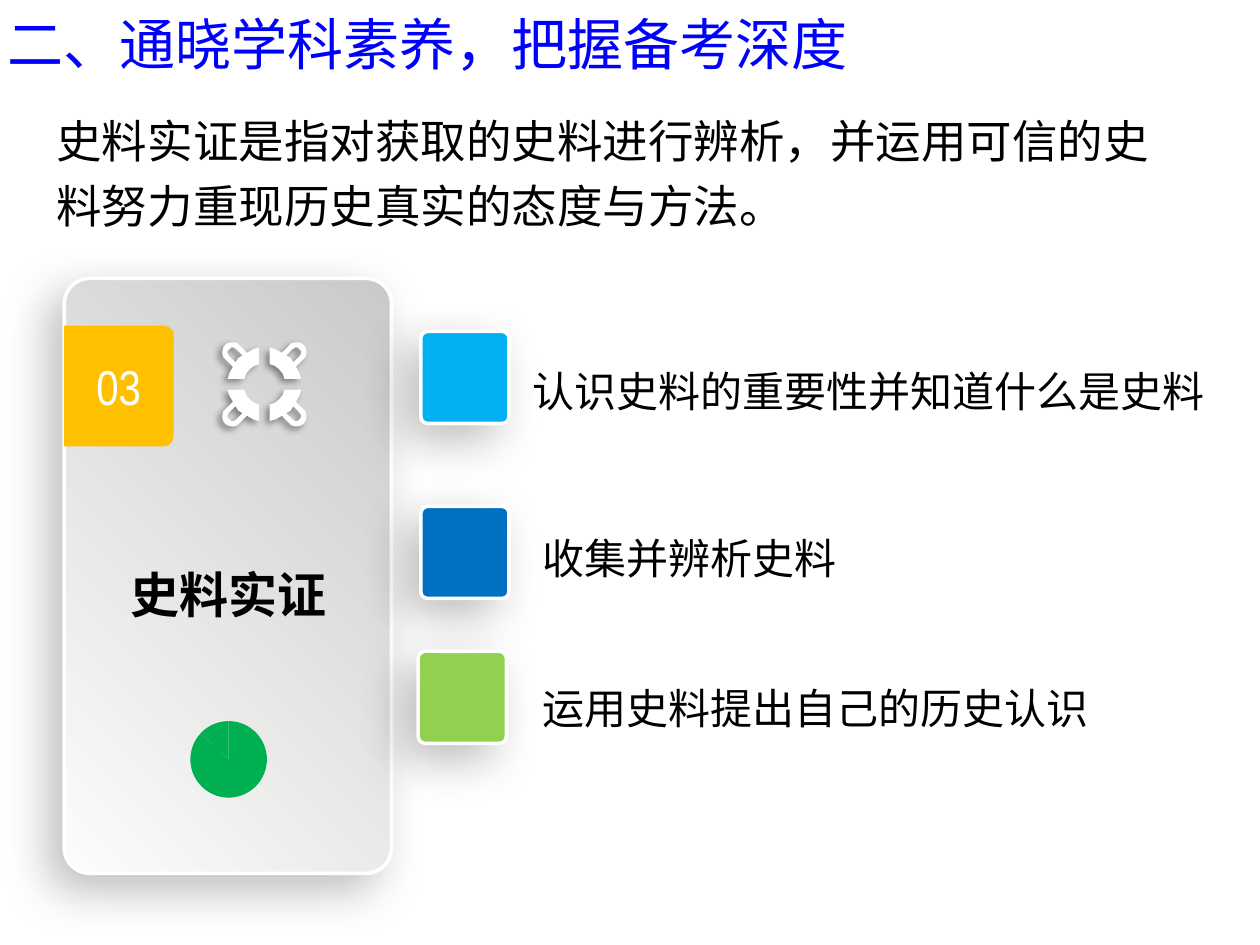
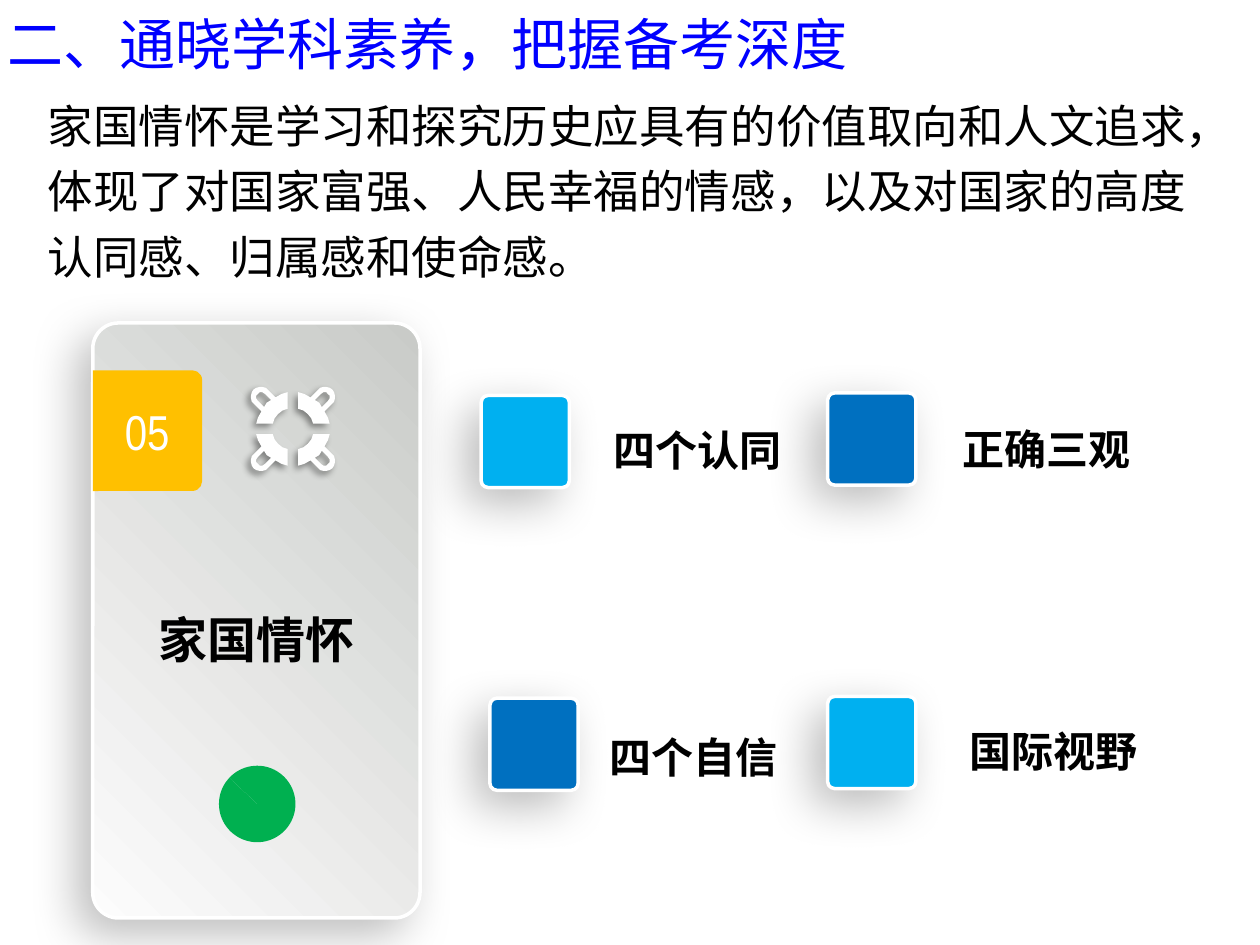
from pptx import Presentation
from pptx import util as u
from pptx.chart.data import CategoryChartData
from pptx.dml.color import RGBColor
from pptx.enum import chart as charts, shapes, text
from pptx.oxml import parse_xml
from pptx.oxml.ns import nsdecls, qn

Pt = u.Pt

# Colours and fonts
BLUE_TITLE = RGBColor(0x00, 0x00, 0xFF)
BLACK = RGBColor(0x00, 0x00, 0x00)
WHITE = RGBColor(0xFF, 0xFF, 0xFF)
CARD_DARK = RGBColor(0xC9, 0xCB, 0xC8)
CARD_LIGHT = RGBColor(0xFC, 0xFC, 0xFC)
AMBER = RGBColor(0xFF, 0xC0, 0x00)
SKY = RGBColor(0x00, 0xB0, 0xF0)
BLUE = RGBColor(0x00, 0x70, 0xC0)
LIME = RGBColor(0x92, 0xD0, 0x50)
GREEN = RGBColor(0x00, 0xB0, 0x50)
CJK_FONT = "Noto Sans CJK SC"
NUMBER_FONT = "Arial Narrow"

HEADING = "二、通晓学科素养，把握备考深度"
CORNER = 0.078
SQUARE_SIZE = (50.4, 52.6)

# Bottom right quarter of the ring icon, in points from its centre
RING_ARM = [(11.5, 3), (21, 3), (20, 6.5), (18, 10), (22, 14), (23.5, 15.5),
            (24, 17.5), (24, 19), (23.5, 21), (22.5, 22.5), (21, 23.5), (19, 24),
            (17.5, 24), (15.5, 23.5), (14, 22), (10, 18), (6.5, 20), (3, 21),
            (3, 11.5), (6, 10.5), (8.5, 8.5), (10.5, 6)]
RING_HOLE = [(16.5, 12.5), (15, 15), (12.5, 16.5), (16, 20), (17.5, 21),
             (19, 21), (20, 20), (21, 19), (21, 17.5), (20, 16)]


def add_text(target, content, left, top, width, height, size=24, font=CJK_FONT,
             color=BLACK, bold=False, align=text.PP_ALIGN.LEFT, spacing=None):
    box = target.add_textbox(Pt(left), Pt(top), Pt(width), Pt(height))
    frame = box.text_frame
    frame.word_wrap = True
    frame.auto_size = text.MSO_AUTO_SIZE.SHAPE_TO_FIT_TEXT
    paragraph = frame.paragraphs[0]
    paragraph.alignment = align
    paragraph.line_spacing = spacing
    run = paragraph.add_run()
    run.text = content
    run.font.name = font
    run.font.size = Pt(size)
    run.font.bold = bold
    run.font.color.rgb = color
    run.font.element.append(parse_xml(f'<a:ea {nsdecls("a")} typeface="{font}"/>')) \
        if hasattr(run.font, "element") else run._r.get_or_add_rPr().append(
            parse_xml(f'<a:ea {nsdecls("a")} typeface="{font}"/>'))


def add_shadow(shape, opacity, blur, distance):
    shape.shadow.inherit = False
    effects = shape.element.spPr.find(qn("a:effectLst"))
    effects.append(parse_xml(
        f'<a:outerShdw {nsdecls("a")} blurRad="{Pt(blur)}" dist="{Pt(distance)}" '
        f'dir="8100000" algn="tr" rotWithShape="0"><a:srgbClr val="000000">'
        f'<a:alpha val="{opacity * 1000}"/></a:srgbClr></a:outerShdw>'))


def add_raised_box(target, left, top, width, height, color=None):
    """Rounded box with a white edge; the card gradient when no colour is given."""
    box = target.add_shape(shapes.MSO_SHAPE.ROUNDED_RECTANGLE,
                           Pt(left), Pt(top), Pt(width), Pt(height))
    box.adjustments[0] = CORNER
    if color is None:
        box.fill.gradient()
        box.fill.gradient_angle = 225
        for stop, shade in zip(box.fill.gradient_stops, (CARD_DARK, CARD_LIGHT)):
            stop.color.rgb = shade
        for stop, position in zip(box.fill.gradient_stops, (0, 1)):
            stop.position = position
    else:
        box.fill.solid()
        box.fill.fore_color.rgb = color
    box.line.color.rgb = WHITE
    box.line.width = Pt(2)
    add_shadow(box, 26, 27, 12)


def add_badge(target, left, top, width, height):
    """Tab rounded on its right side: a top-rounded box turned a quarter."""
    shift = (width - height) / 2
    badge = target.add_shape(shapes.MSO_SHAPE.ROUND_2_SAME_RECTANGLE,
                             Pt(left + shift), Pt(top - shift), Pt(height), Pt(width))
    badge.rotation = 90
    badge.adjustments[0] = 0.09
    badge.fill.solid()
    badge.fill.fore_color.rgb = AMBER
    badge.line.fill.background()
    badge.shadow.inherit = False


def add_ring_icon(target, center_x, center_y):
    contours = [[(Pt(center_x + flip_x * x), Pt(center_y + flip_y * y)) for x, y in outline]
                for flip_x in (1, -1) for flip_y in (1, -1)
                for outline in (RING_ARM, RING_HOLE)]
    builder = target.build_freeform(*contours[0][0])
    for index, (start, *rest) in enumerate(contours):
        if index:
            builder.move_to(*start)
        builder.add_line_segments(rest, close=True)
    icon = builder.convert_to_shape()
    icon.fill.solid()
    icon.fill.fore_color.rgb = WHITE
    icon.line.fill.background()
    add_shadow(icon, 40, 4, 3)


def add_pie(target, left, top, width, height, diameter):
    data = CategoryChartData()
    data.categories = ["1", "2"]
    data.add_series("Series 1", (87, 13))
    chart = target.add_chart(charts.XL_CHART_TYPE.PIE, Pt(left), Pt(top),
                             Pt(width), Pt(height), data).chart
    chart.has_legend = False
    chart.has_title = False
    chart.font.name = "Calibri"
    chart.font.size = Pt(18)
    chart.font.color.rgb = BLACK
    plot = chart.plots[0]
    plot.vary_by_categories = False
    for index in range(2):
        point = plot.series[0].points[index]
        point.format.fill.solid()
        point.format.fill.fore_color.rgb = GREEN
        point.format.line.fill.background()

    # Fixed diameter, centred in the chart frame
    plot_area = chart.element.find(".//" + qn("c:plotArea"))
    for layout in plot_area.findall(qn("c:layout")):
        plot_area.remove(layout)
    share_x, share_y = diameter / width, diameter / height
    sizes = {"x": (1 - share_x) / 2, "y": (1 - share_y) / 2, "w": share_x, "h": share_y}
    places = "".join(f'<c:{key} val="{value:.2f}"/>' for key, value in sizes.items())
    plot_area.insert(0, parse_xml(
        f'<c:layout {nsdecls("c")}><c:manualLayout><c:layoutTarget val="inner"/>'
        f'<c:xMode val="edge"/><c:yMode val="edge"/>{places}'
        f'</c:manualLayout></c:layout>'))


def add_card(slide, left, top, number, name):
    group = slide.shapes.add_group_shape().shapes
    center = text.PP_ALIGN.CENTER
    add_raised_box(group, left, top, 187, 340)
    add_badge(group, left, top + 27, 62.5, 69)
    add_text(group, number, left + 7.6, top + 41.2, 47, 41, size=28,
             font=NUMBER_FONT, color=WHITE, align=center)
    add_text(group, name, left + 2, top + 160, 183.5, 41, size=28, bold=True, align=center)
    add_pie(group, left + 46, top + 243.5, 96, 63.4, 44)
    add_ring_icon(group, left + 114.4, top + 60.5)


def add_topic_slide(presentation, definition, definition_box, card, points, bold):
    slide = presentation.slides.add_slide(presentation.slide_layouts[6])
    add_text(slide.shapes, HEADING, -3, 2, 549, 46, size=32, color=BLUE_TITLE)
    add_card(slide, *card)
    for color, square, label, label_box in points:
        add_raised_box(slide.shapes, *square, *SQUARE_SIZE, color)
        add_text(slide.shapes, label, *label_box, 46, bold=bold, spacing=1.5)
    add_text(slide.shapes, definition, *definition_box, size=26, spacing=1.2)


def main():
    presentation = Presentation()
    presentation.slide_width, presentation.slide_height = Pt(720), Pt(540)

    # Evidence from historical sources
    add_topic_slide(
        presentation,
        "史料实证是指对获取的史料进行辨析，并运用可信的史料努力重现历史真实的态度与方法。",
        (25.2, 54.7, 656.6, 83), (36.7, 159.1, "03", "史料实证"),
        [(SKY, (240.5, 189.4), "认识史料的重要性并知道什么是史料", (297.4, 190.8, 409)),
         (BLUE, (240.5, 289.4), "收集并辨析史料", (303.1, 286.6, 340)),
         (LIME, (239, 372.2), "运用史料提出自己的历史认识", (303.1, 372.2, 340))],
        bold=False)

    # Love of home and country
    add_topic_slide(
        presentation,
        "家国情怀是学习和探究历史应具有的价值取向和人文追求，体现了对国家富强、人民幸福的情感，"
        "以及对国家的高度认同感、归属感和使命感。",
        (20.2, 46.1, 681, 121), (53, 184.6, "05", "家国情怀"),
        [(SKY, (275, 226), "四个认同", (343.4, 224.6, 144)),
         (BLUE, (280, 399), "四个自信", (341.3, 400.3, 144)),
         (BLUE, (473, 224.6), "正确三观", (543, 224, 144)),
         (SKY, (473, 398), "国际视野", (547.2, 396.7, 144))],
        bold=True)

    presentation.save("out.pptx")


if __name__ == "__main__":
    main()
